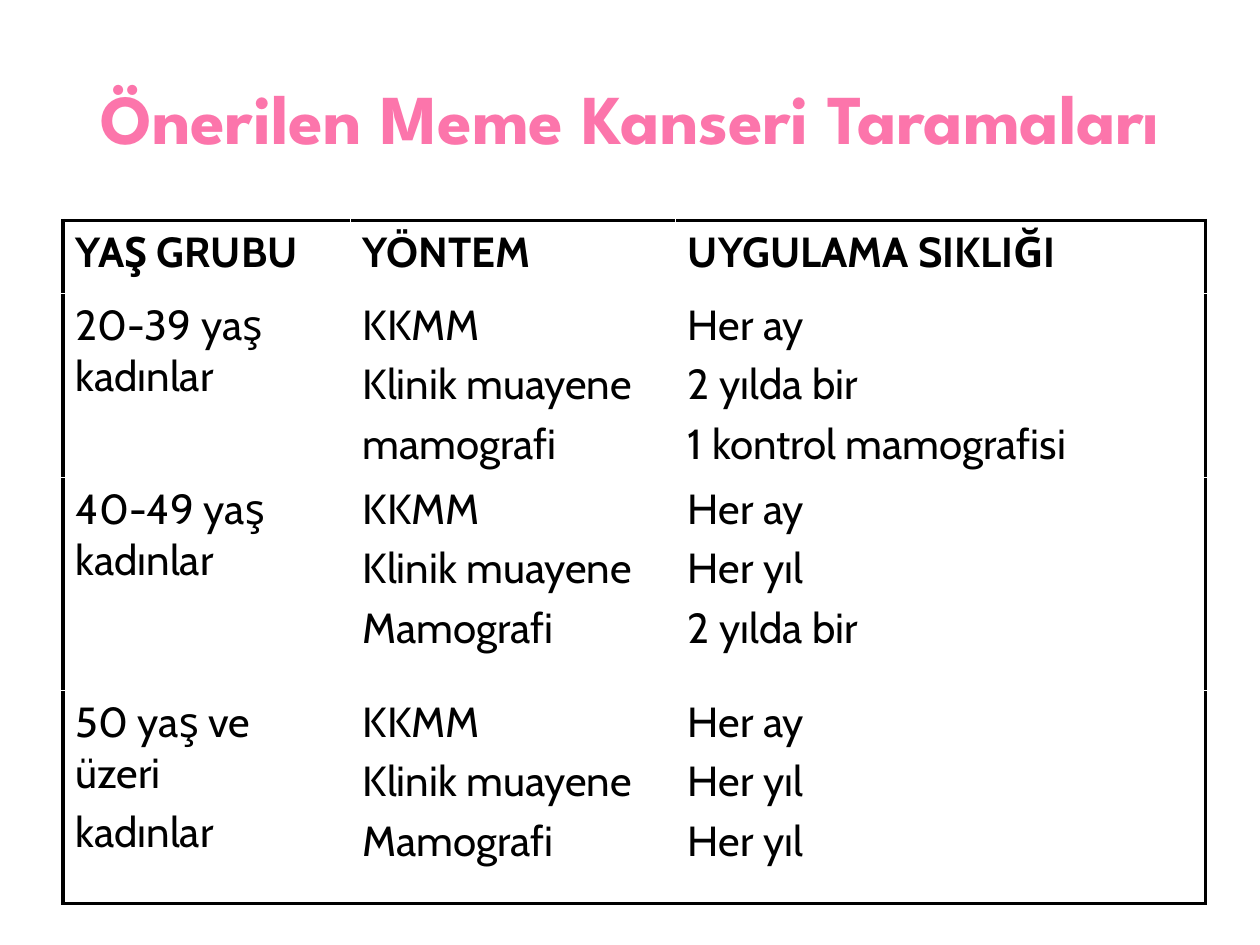
from lxml.etree import SubElement
from pptx import Presentation
from pptx.dml.color import RGBColor
from pptx.enum.text import MSO_ANCHOR, PP_ALIGN
from pptx.oxml.ns import qn
from pptx.util import Inches, Pt

PINK = RGBColor(0xFC, 0x75, 0xAB)
BLACK = RGBColor(0x00, 0x00, 0x00)
WHITE = RGBColor(0xFF, 0xFF, 0xFF)

TITLE_FORMAT = {"name": "League Spartan", "size": Pt(40), "bold": True}
HEADER_FORMAT = {"name": "Cabin", "size": Pt(24), "bold": True}
BODY_FORMAT = {**HEADER_FORMAT, "bold": False}

COLUMN_WIDTHS = [2.28, 2.58, 4.21]
ROW_HEIGHTS = [0.58, 1.46, 1.69, 1.69]
SCREENING_ROWS = [
    ["YAŞ GRUBU", "YÖNTEM", "UYGULAMA SIKLIĞI"],
    ["20-39 yaş kadınlar", "KKMM\nKlinik muayene\nmamografi",
     "Her ay\n2 yılda bir\n1 kontrol mamografisi"],
    ["40-49 yaş kadınlar", "KKMM\nKlinik muayene\nMamografi",
     "Her ay\nHer yıl\n2 yılda bir"],
    ["50 yaş ve üzeri\nkadınlar", "KKMM\nKlinik muayene\nMamografi",
     "Her ay\nHer yıl\nHer yıl"],
]


class SlideBuilder:
    """Holds the style and the slide being filled."""

    outer_border = (BLACK, 2.25)
    inner_border = (WHITE, 1)
    paragraph_gap = Pt(4.8)

    def __init__(self, slide):
        self.slide = slide

    def set_text(self, text_frame, text, color, format_values, **paragraph_values):
        text_frame.text = text
        for paragraph in text_frame.paragraphs:
            for name, value in paragraph_values.items():
                setattr(paragraph, name, value)
            for run in paragraph.runs:
                run.font.color.rgb = color
                for name, value in format_values.items():
                    setattr(run.font, name, value)

    def add_title(self, text, left, top, width, height):
        box = self.slide.shapes.add_textbox(*map(Inches, (left, top, width, height)))
        box.text_frame.word_wrap = True
        box.text_frame.vertical_anchor = MSO_ANCHOR.MIDDLE
        self.set_text(box.text_frame, text, PINK, TITLE_FORMAT, alignment=PP_ALIGN.CENTER)

    def set_border(self, cell, side, is_outer):
        color, width = self.outer_border if is_outer else self.inner_border
        line = SubElement(cell._tc.get_or_add_tcPr(), qn(f"a:ln{side}"), w=str(Pt(width)))
        fill = SubElement(line, qn("a:solidFill"))
        SubElement(fill, qn("a:srgbClr"), val=str(color))

    def add_table(self, rows, left, top, widths, heights):
        frame = self.slide.shapes.add_table(
            len(heights), len(widths),
            *map(Inches, (left, top, sum(widths), sum(heights))))
        table = frame.table
        table.first_row = table.horz_banding = False
        for column, width in zip(table.columns, widths):
            column.width = Inches(width)
        for row, height in zip(table.rows, heights):
            row.height = Inches(height)

        last_row, last_column = len(heights) - 1, len(widths) - 1
        for r, texts in enumerate(rows):
            for c, text in enumerate(texts):
                cell = table.cell(r, c)
                # Only the outline of the table is black
                outer_sides = {"L": c == 0, "R": c == last_column,
                               "T": r == 0, "B": r == last_row}
                for side, is_outer in outer_sides.items():
                    self.set_border(cell, side, is_outer)
                cell.fill.background()
                self.set_text(cell.text_frame, text, BLACK,
                              BODY_FORMAT if r else HEADER_FORMAT,
                              space_before=self.paragraph_gap)


def main():
    presentation = Presentation()
    presentation.slide_width, presentation.slide_height = Inches(10), Inches(7.5)
    builder = SlideBuilder(presentation.slides.add_slide(presentation.slide_layouts[6]))

    # Title
    builder.add_title("Önerilen Meme Kanseri Taramaları", 0, 0.3, 10, 1.25)

    # Screening table
    builder.add_table(SCREENING_ROWS, 0.5, 1.75, COLUMN_WIDTHS, ROW_HEIGHTS)

    presentation.save("out.pptx")


if __name__ == "__main__":
    main()
